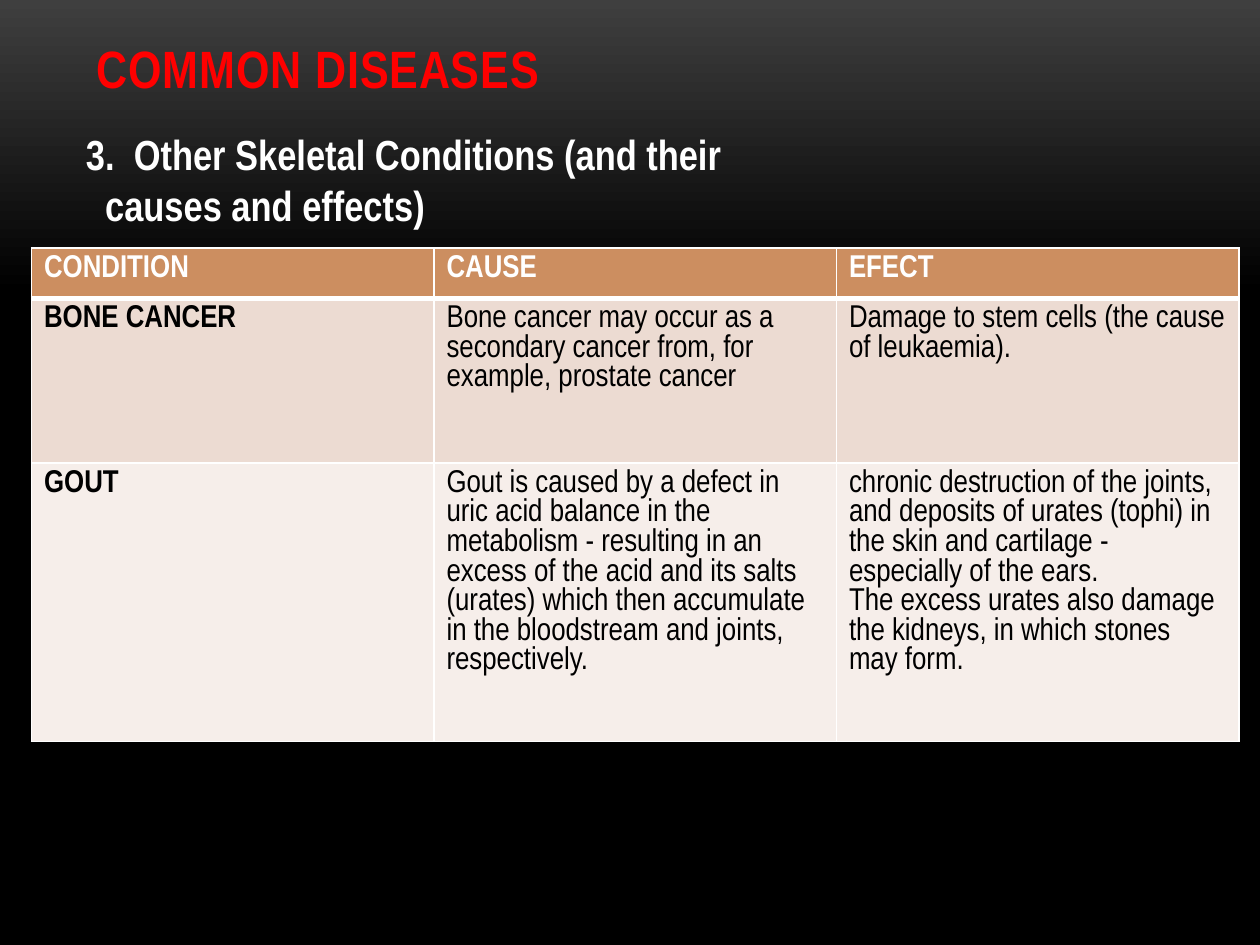
from lxml.etree import SubElement
from pptx import Presentation
from pptx.dml.color import RGBColor
from pptx.enum.text import MSO_ANCHOR, MSO_AUTO_SIZE, PP_ALIGN
from pptx.oxml.ns import qn
from pptx.util import Pt

FONT = "Arial Narrow"
COLORS = {
    "red": "FF0000",
    "white": "FFFFFF",
    "black": "000000",
    "charcoal": "3F3F3F",
    "header": "CC8E60",
    "band dark": "ECDBD2",
    "band light": "F6EEEA",
}


def add_run(paragraph, text, size, color, bold):
    run = paragraph.add_run()
    run.text = text
    run.font.name = FONT
    run.font.size = Pt(size)
    run.font.bold = bold
    run.font.color.rgb = RGBColor.from_string(COLORS[color])
    return run


def add_border(cell, side, width):
    """Draw a white line on one side (L, R, T or B); call before filling the cell."""
    line = SubElement(cell._tc.get_or_add_tcPr(), qn(f"a:ln{side}"), w=str(Pt(width)))
    fill = SubElement(line, qn("a:solidFill"))
    SubElement(fill, qn("a:srgbClr"), val=COLORS["white"])


presentation = Presentation()
presentation.slide_width = Pt(720)
presentation.slide_height = Pt(540)
slide = presentation.slides.add_slide(presentation.slide_layouts[5])

# Background fading from charcoal to black
background = slide.background.fill
background.gradient()
background.gradient_angle = 270
for stop, position, color in zip(background.gradient_stops, (0, 0.31), ("charcoal", "black")):
    stop.position = position
    stop.color.rgb = RGBColor.from_string(COLORS[color])

# Title
title = slide.shapes.title
title.left, title.top, title.width, title.height = Pt(48), Pt(22), Pt(624), Pt(38)
title.text_frame.auto_size = MSO_AUTO_SIZE.NONE
title.text_frame.vertical_anchor = MSO_ANCHOR.BOTTOM
paragraph = title.text_frame.paragraphs[0]
paragraph.alignment = PP_ALIGN.LEFT
run = add_run(paragraph, "COMMON DISEASES", 30, "red", True)
run.font._element.set("spc", "50")

# Numbered heading: a tab after the number, an indent on the second line
heading = slide.shapes.add_textbox(Pt(42), Pt(70), Pt(642), Pt(65.5)).text_frame
heading.word_wrap = True
first = heading.paragraphs[0]
tabs = SubElement(first._p.get_or_add_pPr(), qn("a:tabLst"))
SubElement(tabs, qn("a:tab"), pos=str(Pt(27.4)), algn="l")
add_run(first, "3.\tOther Skeletal Conditions (and their", 24, "white", True)
second = heading.add_paragraph()
second._p.get_or_add_pPr().set("marL", str(Pt(11)))
add_run(second, "causes and effects)", 24, "white", True)

# Table of conditions
rows = [
    ["CONDITION", "CAUSE", "EFECT"],
    [
        "BONE CANCER",
        "Bone cancer may occur as a secondary cancer from, for example, prostate cancer",
        "Damage to stem cells (the cause of leukaemia).",
    ],
    [
        "GOUT",
        "Gout is caused by a defect in uric acid balance in the metabolism - resulting in an "
        "excess of the acid and its salts (urates) which then accumulate in the bloodstream "
        "and joints, respectively.",
        "chronic destruction of the joints, and deposits of urates (tophi) in the skin and "
        "cartilage - especially of the ears.\n"
        "The excess urates also damage the kidneys, in which stones may form.",
    ],
]
row_heights = [28.5, 94, 159]
row_fills = ["header", "band dark", "band light"]

table = slide.shapes.add_table(3, 3, Pt(18), Pt(141.8), Pt(690), Pt(sum(row_heights))).table
for column in table.columns:
    column.width = Pt(230)

for row_index, texts in enumerate(rows):
    table.rows[row_index].height = Pt(row_heights[row_index])
    is_header = row_index == 0
    for column_index, text in enumerate(texts):
        cell = table.cell(row_index, column_index)
        add_border(cell, "L", 1)
        add_border(cell, "R", 1)
        add_border(cell, "T", 3 if row_index == 1 else 1)
        add_border(cell, "B", 3 if is_header else 1)
        cell.fill.solid()
        cell.fill.fore_color.rgb = RGBColor.from_string(COLORS[row_fills[row_index]])
        paragraph = cell.text_frame.paragraphs[0]
        for line_index, line in enumerate(text.split("\n")):
            if line_index:
                paragraph.add_line_break()
            add_run(paragraph, line, 18, "white" if is_header else "black",
                    is_header or column_index == 0)

presentation.save("out.pptx")
